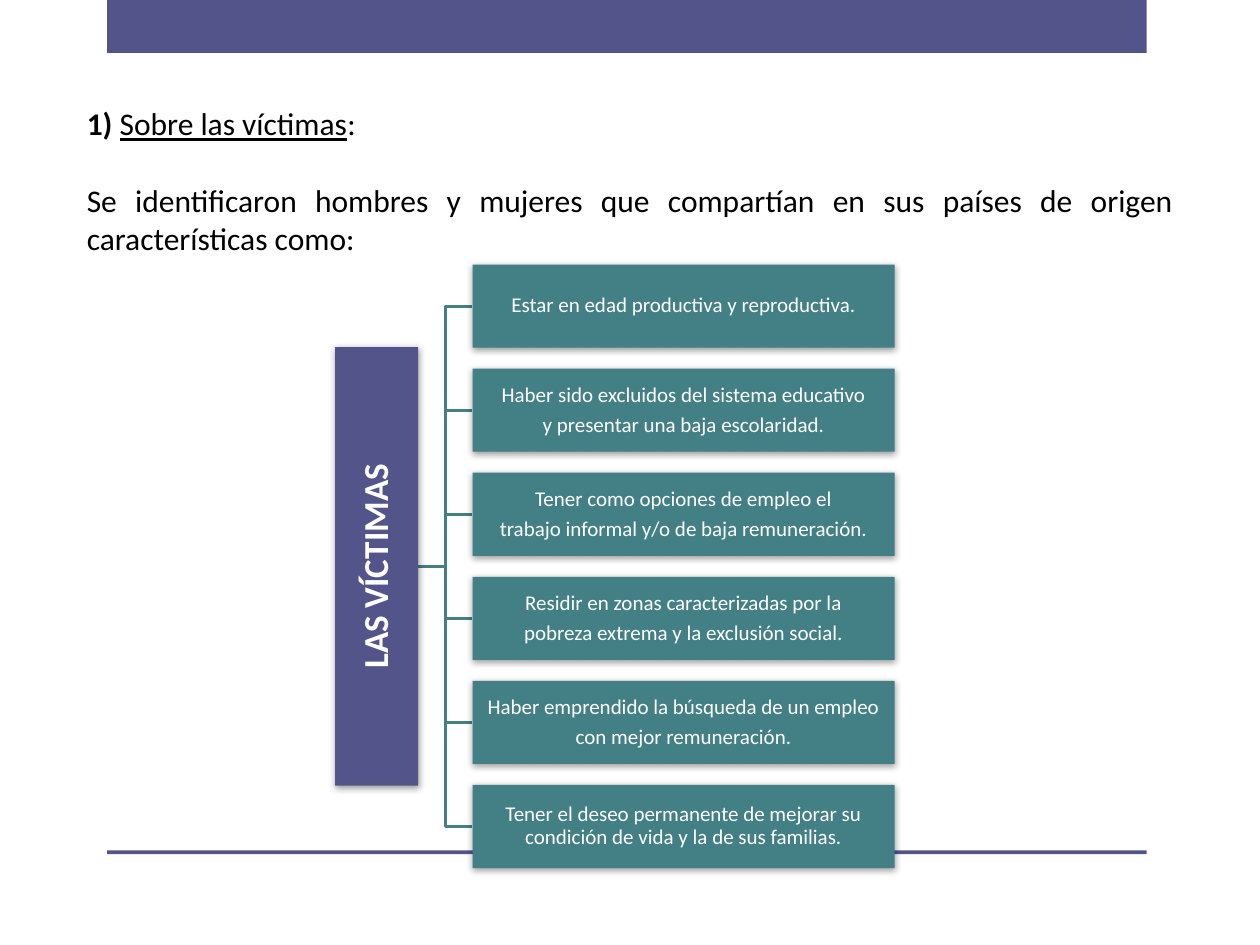
from lxml import etree
from pptx import Presentation
from pptx.dml.color import RGBColor
from pptx.enum.shapes import MSO_SHAPE
from pptx.enum.text import MSO_ANCHOR, PP_ALIGN
from pptx.oxml.ns import qn
from pptx.util import Inches, Pt

PURPLE = RGBColor(0x53, 0x54, 0x8A)
TEAL = RGBColor(0x43, 0x80, 0x86)
WHITE = RGBColor(0xFF, 0xFF, 0xFF)
BLACK = RGBColor(0x00, 0x00, 0x00)
RECT = MSO_SHAPE.RECTANGLE
MIDDLE = MSO_ANCHOR.MIDDLE
CENTER, JUSTIFY = PP_ALIGN.CENTER, PP_ALIGN.JUSTIFY


def add_rect(x, y, w, h, color, shadow=False):
    sp = s.shapes.add_shape(RECT, Inches(x), Inches(y), Inches(w), Inches(h))
    sp.fill.solid()
    sp.fill.fore_color.rgb = color
    sp.line.fill.background()
    sp.shadow.inherit = False
    if shadow:
        effects = sp._element.spPr.find(qn("a:effectLst"))
        outer = etree.SubElement(effects, qn("a:outerShdw"), blurRad=str(Pt(4)),
                                 dist=str(Pt(1)), dir=str(88 * 60000), rotWithShape="0")
        black = etree.SubElement(outer, qn("a:srgbClr"), val="000000")
        etree.SubElement(black, qn("a:alpha"), val="40000")
    return sp


def write_text(sp, paragraphs, size, color, align, bold=False, after=0, spacing=1.0,
               margin=None, anchor=None):
    tf = sp.text_frame
    tf.word_wrap = True
    if anchor is not None:
        tf.vertical_anchor = anchor
    if margin is not None:
        tf.margin_left = tf.margin_right = tf.margin_top = tf.margin_bottom = Inches(margin)
    for i, runs in enumerate(paragraphs):
        p = tf.paragraphs[0] if i == 0 else tf.add_paragraph()
        p.alignment = align
        p.line_spacing = spacing
        p.space_after = Pt(after if i < len(paragraphs) - 1 else 0)
        for text, style in runs:
            r = p.add_run()
            r.text = text
            r.font.name = "Calibri"
            r.font.size = Pt(size)
            r.font.color.rgb = color
            r.font.bold = bold or style == "bold"
            r.font.underline = style == "underline"


prs = Presentation()
prs.slide_width, prs.slide_height = Inches(10), Inches(7.5)
s = prs.slides.add_slide(prs.slide_layouts[6])

add_rect(0.85, 0, 8.25, 0.42, PURPLE)
add_rect(0.85, 6.75, 8.25, 0.03, PURPLE)

intro = s.shapes.add_textbox(Inches(0.59), Inches(0.78), Inches(8.82), Inches(1.31))
write_text(intro, [
    [("1) ", "bold"), ("Sobre las víctimas", "underline"), (":", None)],
    [("Se identificaron hombres y mujeres que compartían en sus países de origen "
      "características como:", None)],
], size=18, color=BLACK, align=JUSTIFY, after=22)

traits = [
    ["Estar en edad productiva y reproductiva."],
    ["Haber sido excluidos del sistema educativo", "y presentar una baja escolaridad."],
    ["Tener como opciones de empleo el", "trabajo informal y/o de baja remuneración."],
    ["Residir en zonas caracterizadas por la", "pobreza extrema y la exclusión social."],
    ["Haber emprendido la búsqueda de un empleo", "con mejor remuneración."],
    ["Tener el deseo permanente de mejorar su condición de vida y la de sus familias."],
]
BOX_X, BOX_W, BOX_H = 3.75, 3.35, 0.66
FIRST_Y, LAST_Y = 2.1, 6.23
ROOT_X, ROOT_LENGTH = 3.32, 3.48
root_y = (FIRST_Y + LAST_Y + BOX_H) / 2
mid_x = (ROOT_X + BOX_X) / 2
step = (LAST_Y - FIRST_Y) / (len(traits) - 1)
tops = [FIRST_Y + i * step for i in range(len(traits))]

for top in tops:
    y = top + BOX_H / 2
    fb = s.shapes.build_freeform(Inches(ROOT_X), Inches(root_y))
    fb.add_line_segments([(Inches(mid_x), Inches(root_y)), (Inches(mid_x), Inches(y)),
                          (Inches(BOX_X), Inches(y))], close=False)
    branch = fb.convert_to_shape()
    branch.fill.background()
    branch.line.color.rgb = TEAL
    branch.line.width = Pt(1.75)
    branch.shadow.inherit = False

root = add_rect(ROOT_X - BOX_H / 2 - ROOT_LENGTH / 2, root_y - BOX_H / 2,
                ROOT_LENGTH, BOX_H, PURPLE, shadow=True)
root.rotation = 270
write_text(root, [[("LAS VÍCTIMAS", None)]], size=20, color=WHITE, align=CENTER,
           bold=True, spacing=0.9, margin=0.01, anchor=MIDDLE)

for top, lines in zip(tops, traits):
    box = add_rect(BOX_X, top, BOX_W, BOX_H, TEAL, shadow=True)
    write_text(box, [[(line, None)] for line in lines], size=12, color=WHITE,
               align=CENTER, after=4.2, spacing=0.9, margin=0.01, anchor=MIDDLE)

prs.save("out.pptx")
